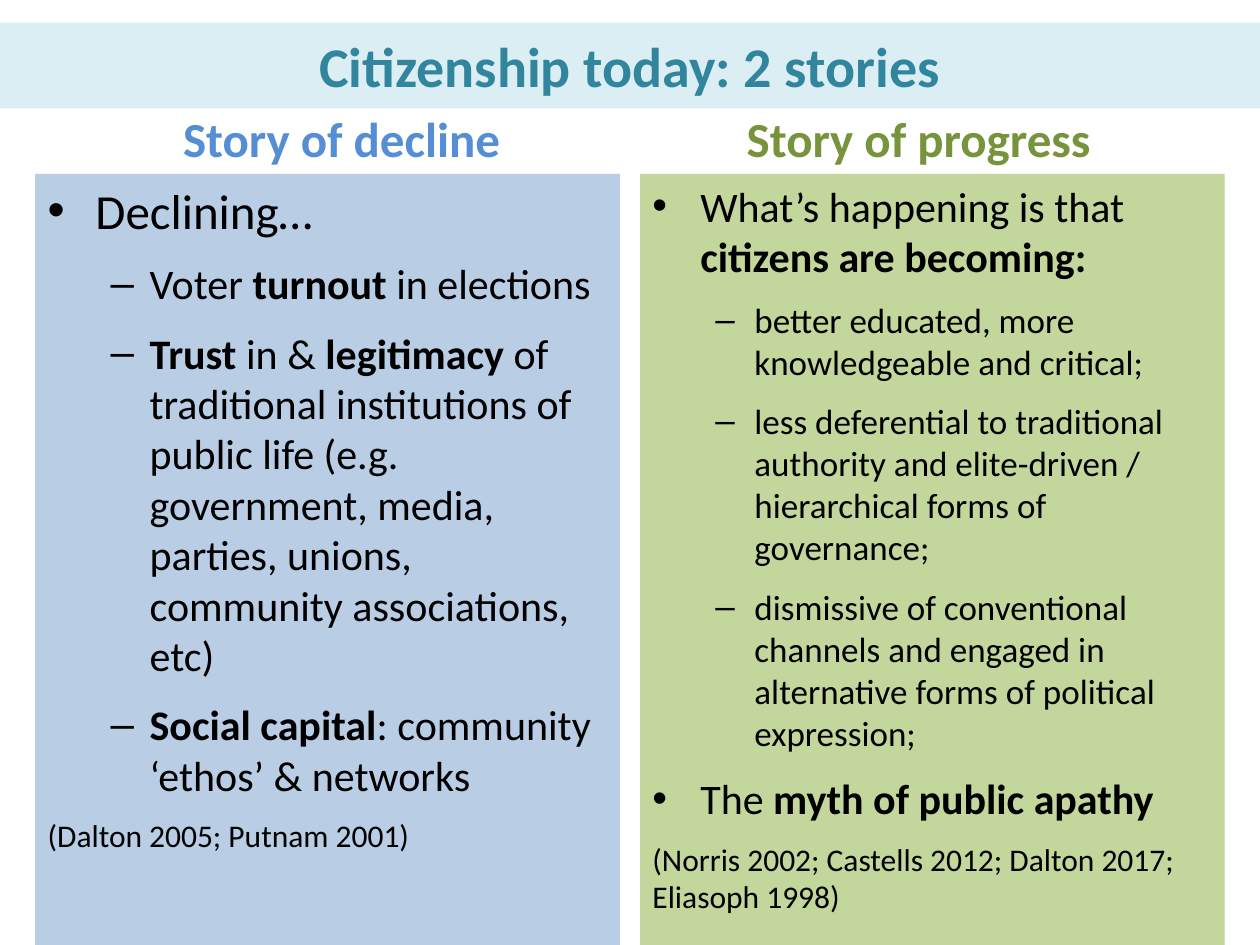
from lxml import etree
from pptx import Presentation
from pptx.dml.color import RGBColor
from pptx.enum.text import MSO_ANCHOR, PP_ALIGN
from pptx.oxml.ns import qn
from pptx.util import Inches, Pt

TOP, MIDDLE, BOTTOM = MSO_ANCHOR.TOP, MSO_ANCHOR.MIDDLE, MSO_ANCHOR.BOTTOM
LEFT, CENTER = PP_ALIGN.LEFT, PP_ALIGN.CENTER
BLACK = RGBColor(0x00, 0x00, 0x00)
TEAL = RGBColor(0x31, 0x85, 0x9C)
PALE_TEAL = RGBColor(0xDB, 0xEE, 0xF4)
BLUE = RGBColor(0x55, 0x8E, 0xD5)
PALE_BLUE = RGBColor(0xB9, 0xCD, 0xE5)
GREEN = RGBColor(0x77, 0x93, 0x3C)
PALE_GREEN = RGBColor(0xC3, 0xD6, 0x9B)

BULLETS = {"point": ("•", 0.38, -0.38), "detail": ("–", 0.81, -0.31)}

DECLINE = [
    ("point", 28, "Declining…"),
    ("detail", 24, "Voter *turnout* in elections"),
    ("detail", 24, "*Trust* in & *legitimacy* of traditional institutions of public life "
     "(e.g. government, media, parties, unions, community associations, etc)"),
    ("detail", 24, "*Social capital*: community ‘ethos’ & networks"),
    ("citation", 18, "(Dalton 2005; Putnam 2001)"),
]
PROGRESS = [
    ("point", 24, "What’s happening is that *citizens are becoming:*"),
    ("detail", 20, "better educated, more knowledgeable and critical;"),
    ("detail", 20, "less deferential to traditional authority and elite-driven / "
     "hierarchical forms of governance;"),
    ("detail", 20, "dismissive of conventional channels and engaged in alternative "
     "forms of political expression;"),
    ("point", 24, "The *myth of public apathy*"),
    ("citation", 18, "(Norris 2002; Castells 2012; Dalton 2017; Eliasoph 1998)"),
]


def add_box(page, area, anchor, fill=None):
    """Add a wrapping text box, filled if a colour is given, and return its frame."""
    box = page.shapes.add_textbox(*map(Inches, area))
    if fill is not None:
        box.fill.solid()
        box.fill.fore_color.rgb = fill
    frame = box.text_frame
    for name, value in {"word_wrap": True, "vertical_anchor": anchor}.items():
        setattr(frame, name, value)
    return frame


def write_spans(para, text, size, color):
    """Write text into a paragraph, with the parts between asterisks in bold."""
    for index, part in enumerate(text.split("*")):
        if part:
            span = para.add_run()
            span.text = part
            formats = {"name": "Calibri", "size": Pt(size), "bold": index % 2 == 1}
            for name, value in formats.items():
                setattr(span.font, name, value)
            span.font.color.rgb = color


def add_bullet(para, symbol, margin, indent):
    """Give a paragraph a bullet with a hanging indent."""
    properties = para._p.get_or_add_pPr()
    for name, value in {"marL": margin, "indent": indent}.items():
        properties.set(name, str(Inches(value)))
    etree.SubElement(properties, qn("a:buFont")).set("typeface", "Arial")
    etree.SubElement(properties, qn("a:buChar")).set("char", symbol)


def add_heading(page, area, text, size, color, anchor, fill=None):
    """Place a centred bold heading."""
    para = add_box(page, area, anchor, fill).paragraphs[0]
    para.alignment = CENTER
    write_spans(para, f"*{text}*", size, color)


def add_story(page, area, items, fill):
    """Place a filled panel with the points of one story."""
    frame = add_box(page, area, TOP, fill)
    for index, (kind, size, text) in enumerate(items):
        para = frame.add_paragraph() if index else frame.paragraphs[0]
        formats = {"alignment": LEFT, "space_before": Pt(size * 0.2), "space_after": Pt(6)}
        for name, value in formats.items():
            setattr(para, name, value)
        if kind in BULLETS:
            add_bullet(para, *BULLETS[kind])
        write_spans(para, text, size, BLACK)


def main():
    """Build the slide and save the deck."""
    deck = Presentation()
    deck.slide_width, deck.slide_height = Inches(10), Inches(7.5)
    page = deck.slides.add_slide(deck.slide_layouts[6])
    add_heading(page, (0, 0.18, 10, 0.68), "Citizenship today: 2 stories", 32, TEAL,
                MIDDLE, PALE_TEAL)
    stories = [
        (0.5, 0.28, "Story of decline", BLUE, DECLINE, PALE_BLUE),
        (5.08, 5.08, "Story of progress", GREEN, PROGRESS, PALE_GREEN),
    ]
    for heading_left, panel_left, heading, color, items, fill in stories:
        add_heading(page, (heading_left, 0.68, 4.42, 0.7), heading, 28, color, BOTTOM)
        add_story(page, (panel_left, 1.38, 4.64, 6.12), items, fill)
    deck.save("out.pptx")


if __name__ == "__main__":
    main()
